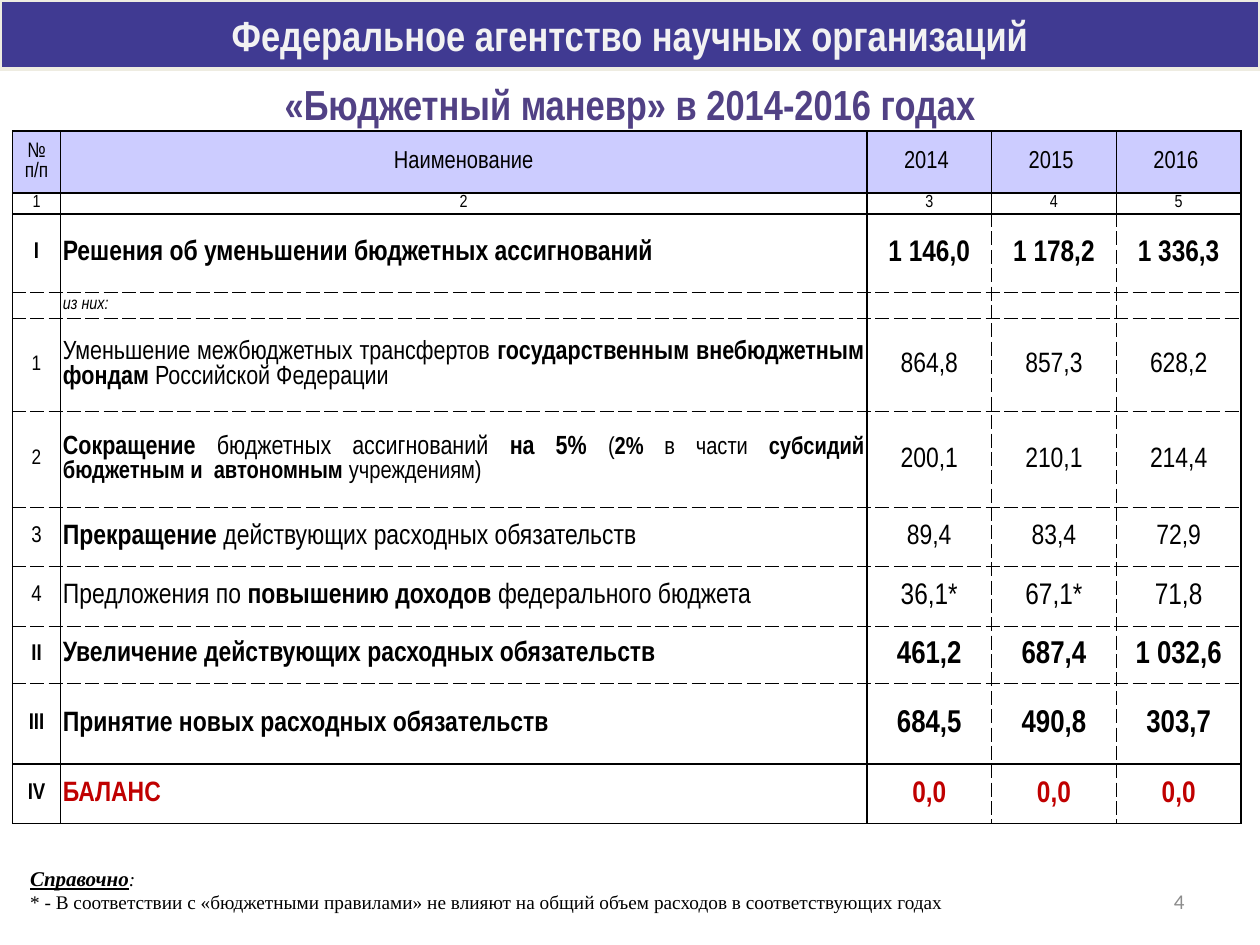
from lxml.etree import SubElement
from pptx import Presentation
from pptx.dml.color import RGBColor
from pptx.enum.shapes import MSO_SHAPE
from pptx.enum.text import MSO_ANCHOR, PP_ALIGN
from pptx.oxml.ns import qn
from pptx.util import Inches, Pt

THEME = dict(
    font="Arial Narrow", note_font="Times New Roman", number_font="Calibri",
    ink="000000", red="C00000", band="403A92", band_line="EEECE1",
    band_text="F2F2F2", title="514185", head="CCCCFF", number="8C8C8C",
    title_size=24, head_size=14, small=10, item=12, item_big=13,
    text=16, text_mid=15, text_low=14, note=11, note_head=12,
)
T = THEME
LEFT, CENTER, RIGHT, JUSTIFY = (PP_ALIGN.LEFT, PP_ALIGN.CENTER,
                                PP_ALIGN.RIGHT, PP_ALIGN.JUSTIFY)

AGENCY = "Федеральное агентство научных организаций"
TITLE = "«Бюджетный маневр» в 2014-2016 годах"
HEAD = ["№\nп/п", "Наименование", "2014 ", "2015 ", "2016 "]
COL_NUMBERS = ["1", "2", "3", "4", "5"]
# Item, its size, name as (size, text with |bold| parts), values, their size, bold row, colour
ROWS = [
    ("I", T["item_big"], [(T["text"], "Решения об уменьшении бюджетных ассигнований")],
     ["1 146,0", "1 178,2", "1 336,3"], 17, True, T["ink"]),
    ("", T["small"], [(T["small"], "из них:")], ["", "", ""], T["small"], False, T["ink"]),
    ("1", T["item"], [(T["text_mid"], "Уменьшение межбюджетных трансфертов |государственным "
                       "внебюджетным фондам| Российской Федерации")],
     ["864,8", "857,3", "628,2"], 16, False, T["ink"]),
    ("2", T["item"], [(T["text_mid"], "|Сокращение |бюджетных ассигнований |на 5% |"),
                      (T["text_low"], "(|2%| в части |субсидий бюджетным и  автономным"
                       "| учреждениям)")],
     ["200,1", "210,1", "214,4"], 16, False, T["ink"]),
    ("3", T["item_big"], [(T["text"], "|Прекращение| действующих расходных обязательств")],
     ["89,4", "83,4", "72,9"], 16, False, T["ink"]),
    ("4", T["item_big"], [(T["text"], "Предложения по| повышению доходов |федерального бюджета")],
     ["36,1*", "67,1*", "71,8"], 17, False, T["ink"]),
    ("II", T["item_big"], [(T["text"], "Увеличение действующих расходных обязательств ")],
     ["461,2", "687,4", "1 032,6"], 18, True, T["ink"]),
    ("III", T["item_big"], [(T["text"], "Принятие новых расходных обязательств ")],
     ["684,5", "490,8", "303,7"], 18, True, T["ink"]),
    ("IV", T["item_big"], [(T["text"], "БАЛАНС")], ["0,0", "0,0", "0,0"], 17, True, T["red"]),
]
NOTE_HEAD = "Справочно"
NOTE = ("* - В соответствии с «бюджетными правилами» не влияют на общий объем "
        "расходов в соответствующих годах")
PAGE = "4"

COL_WIDTHS = [0.38, 6.4] + [0.99] * 3
ROW_HEIGHTS = [0.49, 0.16, 0.62, 0.21, 0.74, 0.76, 0.47, 0.47, 0.46, 0.64, 0.47]
FIRST_BODY, LAST_ROW, FIRST_VALUE, LAST_COL = 2, 10, 2, 4


def rgb(value):
    return RGBColor.from_string(value)


def add_run(p, text, size, color=T["ink"], font=T["font"], bold=False,
            italic=False, underline=False):
    r = p.add_run()
    r.text = text
    f = r.font
    f.size, f.name, f.bold, f.italic, f.underline = Pt(size), font, bold, italic, underline
    f.color.rgb = rgb(color)


def set_margins(target, sides):
    (target.margin_left, target.margin_top,
     target.margin_right, target.margin_bottom) = map(Inches, sides)


def add_box(slide, box, anchor=MSO_ANCHOR.MIDDLE):
    tf = slide.shapes.add_textbox(*map(Inches, box)).text_frame
    tf.word_wrap, tf.vertical_anchor = True, anchor
    return tf


def set_borders(cell, row, col):
    """Solid frame and headings; dashed lines inside the body."""
    body = row >= FIRST_BODY
    dashed = dict(
        L=body and col > FIRST_VALUE,
        R=body and FIRST_VALUE <= col < LAST_COL,
        T=FIRST_BODY < row < LAST_ROW,
        B=FIRST_BODY <= row < LAST_ROW - 1,
    )
    tcPr = cell._tc.get_or_add_tcPr()
    for i, (side, is_dashed) in enumerate(dashed.items()):
        ln = SubElement(tcPr, qn(f"a:ln{side}"), w=str(Pt(0.25 if is_dashed else 1)))
        fill = SubElement(ln, qn("a:solidFill"))
        SubElement(fill, qn("a:srgbClr"), val=T["ink"])
        SubElement(ln, qn("a:prstDash"), val="dash" if is_dashed else "solid")
        tcPr.insert(i, ln)


def fill_cell(cell, pieces, align=CENTER, margins=(0, 0, 0, 0), bold=False, **fmt):
    """Write (size, text) pieces; text between bars is bold."""
    cell.vertical_anchor = MSO_ANCHOR.MIDDLE
    set_margins(cell, margins)
    p = cell.text_frame.paragraphs[0]
    p.alignment = align
    for size, text in pieces:
        for n, line in enumerate(text.split("\n")):
            if n:
                p = cell.text_frame.add_paragraph()
                p.alignment = align
            for i, part in enumerate(line.split("|")):
                if part:
                    add_run(p, part, size, bold=bold or i % 2 == 1, **fmt)
        if not text:
            SubElement(p._p, qn("a:endParaRPr"), sz=str(size * 100))


def add_budget_table(slide):
    table = slide.shapes.add_table(
        len(ROW_HEIGHTS), len(COL_WIDTHS), Inches(0.1), Inches(1.04),
        Inches(sum(COL_WIDTHS)), Inches(sum(ROW_HEIGHTS))).table
    table.first_row = table.horz_banding = False
    for column, width in zip(table.columns, COL_WIDTHS):
        column.width = Inches(width)
    for row, height in zip(table.rows, ROW_HEIGHTS):
        row.height = Inches(height)

    for col, (text, number) in enumerate(zip(HEAD, COL_NUMBERS)):
        size = T["head_size"] if col else T["item"]
        fill_cell(table.cell(0, col), [(size, text)])
        fill_cell(table.cell(1, col), [(T["small"], number)])
    for row, (item, item_size, name, values, size, bold, color) in enumerate(ROWS, FIRST_BODY):
        fill_cell(table.cell(row, 0), [(item_size, item)], bold=bold)
        pad = 0.06 if name[0][0] == T["text_mid"] else 0.01
        fill_cell(table.cell(row, 1), name, JUSTIFY, (0.02, pad, 0.02, pad), bold,
                  color=color, italic=name[0][0] == T["small"])
        for col, value in enumerate(values, FIRST_VALUE):
            fill_cell(table.cell(row, col), [(size, value)], CENTER,
                      (0.01, 0.01, 0.01, 0), bold, color=color)

    for row in range(len(ROW_HEIGHTS)):
        for col in range(len(COL_WIDTHS)):
            cell = table.cell(row, col)
            if row == 0:
                cell.fill.solid()
                cell.fill.fore_color.rgb = rgb(T["head"])
            else:
                cell.fill.background()
            set_borders(cell, row, col)


def main():
    prs = Presentation()
    prs.slide_width, prs.slide_height = Inches(10), Inches(7.5)
    slide = prs.slides.add_slide(prs.slide_layouts[6])

    band = slide.shapes.add_shape(MSO_SHAPE.RECTANGLE, 0, 0, prs.slide_width, Inches(0.55))
    band.shadow.inherit = False
    band.fill.solid()
    band.fill.fore_color.rgb = rgb(T["band"])
    band.line.color.rgb = rgb(T["band_line"])
    band.line.width = Pt(2.25)
    tf = band.text_frame
    tf.word_wrap, tf.vertical_anchor = False, MSO_ANCHOR.MIDDLE
    tf.paragraphs[0].alignment = CENTER
    add_run(tf.paragraphs[0], AGENCY, T["title_size"], T["band_text"], bold=True)

    p = add_box(slide, (0.21, 0.65, 9.58, 0.42)).paragraphs[0]
    p.alignment, p.line_spacing = CENTER, 0.8
    add_run(p, TITLE, T["title_size"], T["title"], bold=True)

    add_budget_table(slide)

    tf = add_box(slide, (0.14, 6.82, 9.75, 0.49), MSO_ANCHOR.TOP)
    p = tf.paragraphs[0]
    add_run(p, NOTE_HEAD, T["note_head"], font=T["note_font"],
            bold=True, italic=True, underline=True)
    add_run(p, ":", T["note"], font=T["note_font"], italic=True)
    add_run(tf.add_paragraph(), NOTE, T["note"], font=T["note_font"])

    p = add_box(slide, (7.17, 6.95, 2.33, 0.4)).paragraphs[0]
    p.alignment = RIGHT
    add_run(p, PAGE, T["item"], T["number"], T["number_font"])

    prs.save("out.pptx")


if __name__ == "__main__":
    main()
